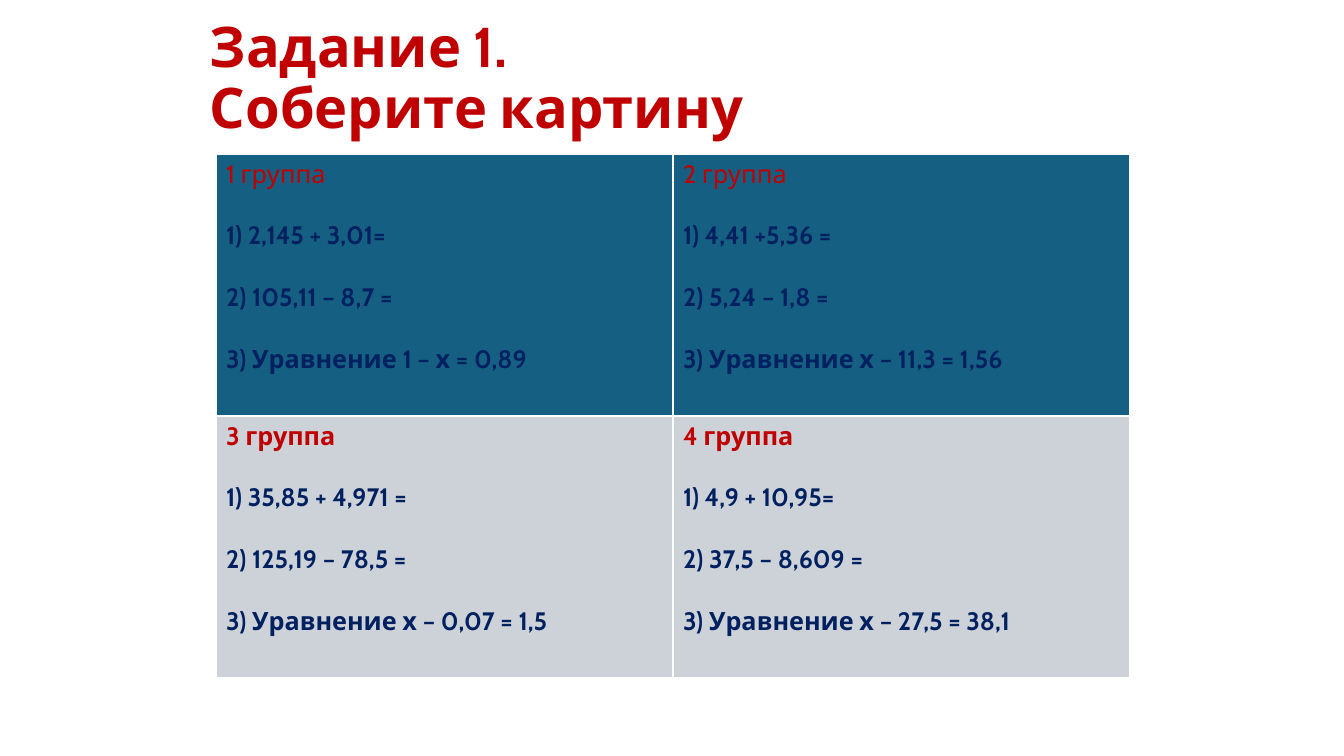
import pptx
import pptx.dml.color
import pptx.enum.text
import pptx.oxml.ns
import pptx.util
from lxml import etree

RGBColor = pptx.dml.color.RGBColor
RED = RGBColor(0xC0, 0x00, 0x00)
NAVY = RGBColor(0x00, 0x20, 0x60)
TEAL = RGBColor(0x15, 0x60, 0x82)
GREY = RGBColor(0xCC, 0xD2, 0xD8)
WHITE = RGBColor(0xFF, 0xFF, 0xFF)

SLIDE_WIDTH, SLIDE_HEIGHT = 1344, 756
EMU_PER_PX = 12192000 / SLIDE_WIDTH

GROUPS = [
    [
        ["1 группа", "1) 2,145 + 3,01=", "2) 105,11 – 8,7 =", "3) Уравнение 1 – х = 0,89"],
        ["2 группа", "1) 4,41 +5,36 =", "2) 5,24 – 1,8 =", "3) Уравнение х – 11,3 = 1,56"],
    ],
    [
        ["3 группа", "1) 35,85 + 4,971 =", "2) 125,19 – 78,5 =", "3) Уравнение х – 0,07 = 1,5"],
        ["4 группа", "1) 4,9 + 10,95=", "2) 37,5 – 8,609 =", "3) Уравнение х – 27,5 = 38,1"],
    ],
]


def px(length):
    return pptx.util.Emu(round(length * EMU_PER_PX))


class TaskSlide:
    font = "Cabin"
    title_size = 40
    task_size = 18
    task_gap = 22

    def __init__(self, deck):
        self.slide = deck.slides.add_slide(deck.slide_layouts[6])

    def style(self, paragraph, size, color, bold):
        for run in paragraph.runs:
            run.font.name = self.font
            run.font.size = pptx.util.Pt(size)
            run.font.color.rgb = color
            run.font.bold = bold

    def title(self, text, left, top, width, height):
        box = self.slide.shapes.add_textbox(px(left), px(top), px(width), px(height))
        frame = box.text_frame
        frame.word_wrap = True
        frame.vertical_anchor = pptx.enum.text.MSO_ANCHOR.MIDDLE
        frame.text = text
        for line in frame.paragraphs:
            line.line_spacing = 0.9
            self.style(line, self.title_size, RED, True)

    def borders(self, cell):
        properties = cell._tc.get_or_add_tcPr()
        for side in ("a:lnL", "a:lnR", "a:lnT", "a:lnB"):
            border = etree.SubElement(properties, pptx.oxml.ns.qn(side), w=str(pptx.util.Pt(1)))
            fill = etree.SubElement(border, pptx.oxml.ns.qn("a:solidFill"))
            etree.SubElement(fill, pptx.oxml.ns.qn("a:srgbClr"), val=str(WHITE))

    def group(self, cell, lines, fill, heading_bold):
        self.borders(cell)
        cell.fill.solid()
        cell.fill.fore_color.rgb = fill
        cell.text_frame.text = "\n".join(lines)
        heading, *tasks = cell.text_frame.paragraphs
        self.style(heading, self.task_size, RED, heading_bold)
        for task in tasks:
            task.space_before = pptx.util.Pt(self.task_gap)
            self.style(task, self.task_size, NAVY, True)

    def group_table(self, groups, left, top, column_width, row_height):
        rows, columns = len(groups), len(groups[0])
        table = self.slide.shapes.add_table(
            rows, columns, px(left), px(top), px(column_width * columns), px(row_height * rows)
        ).table
        for row, row_groups in enumerate(groups):
            for column, lines in enumerate(row_groups):
                fill = GREY if row else TEAL
                self.group(table.cell(row, column), lines, fill, row > 0)


def main():
    deck = pptx.Presentation()
    deck.slide_width = px(SLIDE_WIDTH)
    deck.slide_height = px(SLIDE_HEIGHT)
    task_slide = TaskSlide(deck)
    task_slide.title("Задание 1.\vСоберите картину", 200, 11, 953, 138)
    task_slide.group_table(GROUPS, 216, 154, 457, 262)
    deck.save("out.pptx")


if __name__ == "__main__":
    main()
